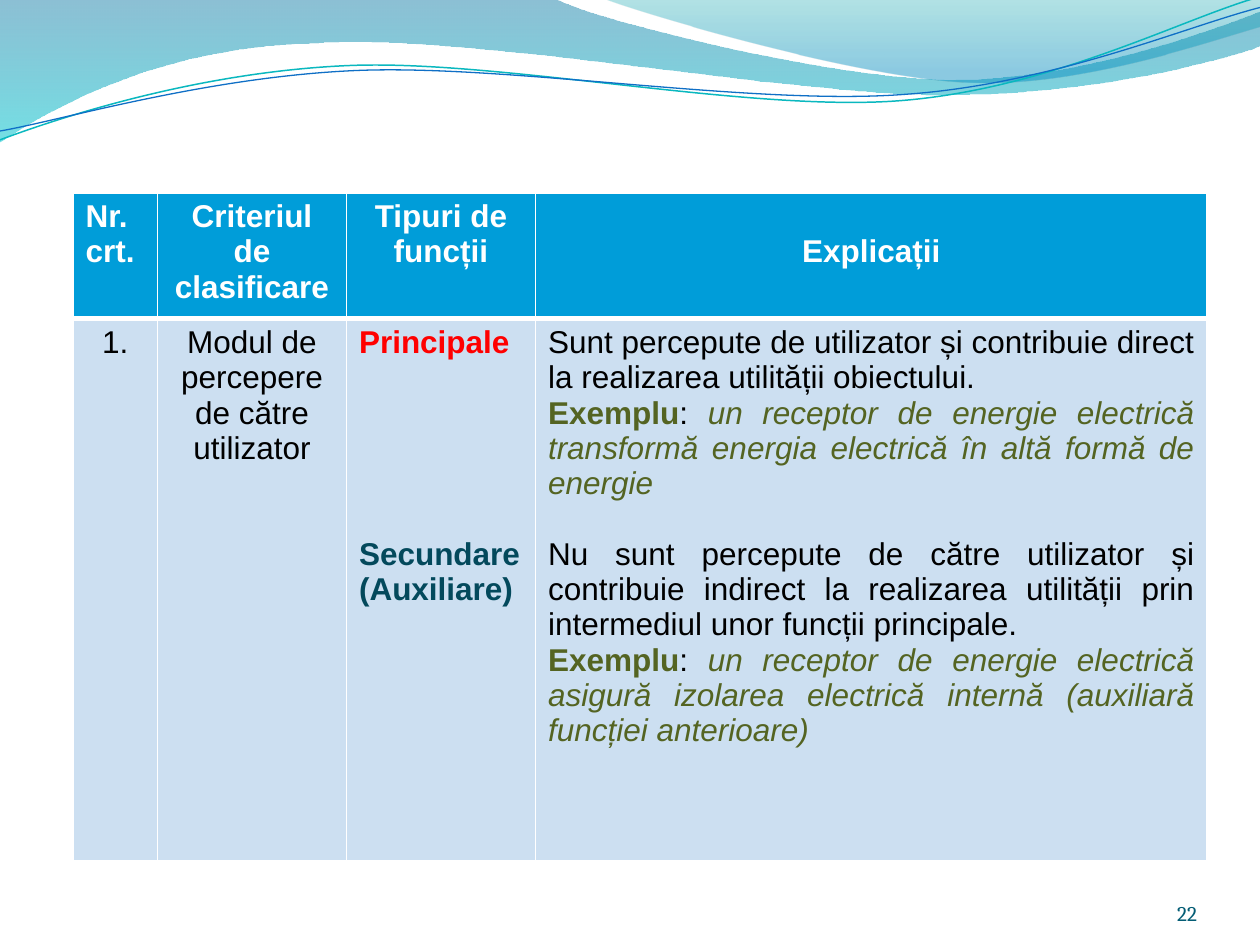
from math import cos, radians, sin

from lxml.etree import SubElement
from pptx import Presentation
from pptx.dml.color import RGBColor
from pptx.enum.text import MSO_ANCHOR, PP_ALIGN
from pptx.oxml.ns import qn
from pptx.util import Inches, Pt

COLORS = {
    "white": "FFFFFF", "black": "000000", "red": "FF0000", "teal": "03495C",
    "olive": "546422", "header": "009DD9", "body": "CCDFF1", "number": "045D75",
    "wave_blue": "0074A1", "wave_cyan": "00C6CF", "crest_teal": "00A1A9",
    "crest_blue": "008BBF", "line_teal": "0AB8BF", "line_blue": "0F6FC6",
}
LINE_HEIGHT = 20.2
TILT = -2.7

# Outlines in inches: one point is a straight step, three points are a Bezier curve.
WAVE = [[(0, 0)], [(4.4, -0.01)],
        [(4.76, 0.17), (6.64, 0.63), (7.58, 0.63)],
        [(8.53, 0.63), (9.58, 0.26), (10, 0.09)], [(10.01, 0.36)],
        [(9.83, 0.44), (8.7, 0.76), (7.46, 0.75)],
        [(6.22, 0.75), (3.82, 0.28), (2.57, 0.34)],
        [(1.29, 0.36), (0.46, 0.83), (-0.01, 1.13)], [(0, 0)]]
CREST = [[(4.79, -0.01)],
         [(5.09, 0.11), (6.82, 0.62), (7.69, 0.65)],
         [(8.56, 0.69), (9.61, 0.32), (10, 0.21)], [(10, 0)], [(4.79, -0.01)]]
TEAL_LINE = [[(0, 1.11)],
             [(0.48, 0.93), (1.58, 0.57), (2.77, 0.52)],
             [(3.95, 0.47), (5.93, 0.89), (7.13, 0.8)],
             [(8.33, 0.71), (9.38, 0.15), (9.98, -0.02)]]
BLUE_LINE = [[(0, 1.04)],
             [(0.47, 0.96), (1.64, 0.61), (2.83, 0.56)],
             [(4.03, 0.51), (5.97, 0.84), (7.17, 0.75)],
             [(8.36, 0.67), (9.41, 0.21), (10, 0.06)]]


def color(name):
    return RGBColor.from_string(COLORS[name])


def turn(outline, center, degrees):
    """Turn an outline clockwise about a center."""
    (cx, cy), c, s = center, cos(radians(degrees)), sin(radians(degrees))
    return [[(cx + (x - cx) * c - (y - cy) * s, cy + (x - cx) * s + (y - cy) * c)
             for x, y in step] for step in outline]


def add_outline(page, outline, close):
    """Add a freeform, joining each three-point step into one Bezier curve."""
    points = [(Inches(x), Inches(y)) for step in outline for x, y in step]
    builder = page.shapes.build_freeform(*points[0], scale=1.0)
    builder.add_line_segments(points[1:], close=close)
    shape = builder.convert_to_shape()
    shape.shadow.inherit = False
    segments = iter(shape._element.spPr.findall(".//" + qn("a:lnTo")))
    for step in outline[1:]:
        first, *others = [next(segments) for _ in step]
        if others:
            first.tag = qn("a:cubicBezTo")
        for segment in others:
            first.append(segment[0])
            segment.getparent().remove(segment)
    return shape


def add_band(page, outline, stops):
    """Add a borderless shape with a downward, see-through gradient."""
    shape = add_outline(page, outline, True)
    shape.line.fill.background()
    shape.fill.gradient()
    shape.fill.gradient_angle = 270
    for stop, (position, name, _) in zip(shape.fill.gradient_stops, stops):
        stop.position = position
        stop.color.rgb = color(name)
    tints = shape._element.spPr.findall(".//" + qn("a:srgbClr"))
    for tint, (_, _, opacity) in zip(tints, stops):
        SubElement(tint, qn("a:alpha"), val=str(opacity * 1000))


def add_curve(page, outline, center, name, width):
    """Add an open line, drawn level and then tilted about its center."""
    shape = add_outline(page, turn(outline, center, -TILT), False)
    shape.rotation = TILT
    shape.fill.background()
    shape.line.color.rgb = color(name)
    shape.line.width = Pt(width)


def add_span(para, text, name, bold=False, italic=False, size=18, font="Arial"):
    span = para.add_run()
    span.text = text
    span.font.name, span.font.size = font, Pt(size)
    span.font.bold, span.font.italic = bold, italic
    span.font.color.rgb = color(name)


def fill_cell(cell, fill, bottom, paras, align):
    """Style a cell and write paras, each a pair of blank lines above and spans."""
    properties = cell._tc.get_or_add_tcPr()
    for side, width in (("L", 1), ("R", 1), ("T", 1), ("B", bottom)):
        border = SubElement(properties, qn("a:ln" + side), w=str(Pt(width)))
        solid = SubElement(border, qn("a:solidFill"))
        SubElement(solid, qn("a:srgbClr"), val=COLORS["white"])
    cell.fill.solid()
    cell.fill.fore_color.rgb = color(fill)
    frame = cell.text_frame
    for index, (blank_lines, spans) in enumerate(paras):
        para = frame.add_paragraph() if index else frame.paragraphs[0]
        para.alignment = align
        if blank_lines:
            para.space_before = Pt(blank_lines * LINE_HEIGHT)
        for span in spans:
            add_span(para, *span)


def example(text):
    return (0, [("Exemplu", "olive", True), (": ", "black"), (text, "olive", False, True)])


def add_functions_table(page):
    table = page.shapes.add_table(2, 4, Inches(0.58), Inches(1.53), Inches(9), Inches(5.3)).table
    table.horz_banding = False
    for column, width in zip(table.columns, (0.67, 1.5, 1.5, 5.33)):
        column.width = Inches(width)
    for row, height in zip(table.rows, (1, 4.3)):
        row.height = Inches(height)

    left, center, justify = PP_ALIGN.LEFT, PP_ALIGN.CENTER, PP_ALIGN.JUSTIFY
    headers = [("Nr.crt.", left), ("Criteriul de clasificare", center),
               ("Tipuri de funcții", center), ("Explicații", center)]
    for column, (text, align) in enumerate(headers):
        fill_cell(table.cell(0, column), "header", 3, [(0, [(text, "white", True)])], align)
    table.cell(0, 3).margin_top = Inches(0.05) + Pt(LINE_HEIGHT)

    body = [
        (center, [(0, [("1.", "black")])]),
        (center, [(0, [("Modul de percepere de către utilizator", "black")])]),
        (left, [(0, [("Principale", "red", True)]),
                (5, [("Secundare", "teal", True)]),
                (0, [("(Auxiliare)", "teal", True)])]),
        (justify, [
            (0, [("Sunt percepute de utilizator și contribuie direct la realizarea "
                  "utilității obiectului.", "black")]),
            example("un receptor de energie electrică transformă energia electrică "
                    "în altă formă de energie"),
            (1, [("Nu sunt percepute de către utilizator și contribuie indirect la "
                  "realizarea utilității prin intermediul unor funcții principale.", "black")]),
            example("un receptor de energie electrică asigură izolarea electrică "
                    "internă (auxiliară funcției anterioare)")]),
    ]
    for column, (align, paras) in enumerate(body):
        fill_cell(table.cell(1, column), "body", 1, paras, align)


def add_page_number(page, number):
    box = page.shapes.add_textbox(Inches(8.67), Inches(6.95), Inches(0.83), Inches(0.4))
    frame = box.text_frame
    frame.word_wrap = True
    frame.vertical_anchor = MSO_ANCHOR.BOTTOM
    frame.margin_left = frame.margin_right = frame.margin_top = frame.margin_bottom = 0
    para = frame.paragraphs[0]
    para.alignment = PP_ALIGN.RIGHT
    add_span(para, number, "number", size=12, font="Cambria")


def main():
    deck = Presentation()
    deck.slide_width, deck.slide_height = Inches(10), Inches(7.5)
    page = deck.slides.add_slide(deck.slide_layouts[6])
    add_band(page, WAVE, [(0, "wave_blue", 45), (1, "wave_cyan", 55)])
    add_band(page, CREST, [(0, "crest_teal", 30), (0.8, "crest_blue", 45)])
    add_curve(page, TEAL_LINE, (4.99, 0.58), "line_teal", 0.85)
    add_curve(page, BLUE_LINE, (5, 0.59), "line_blue", 0.75)
    add_functions_table(page)
    add_page_number(page, "22")
    deck.save("out.pptx")


if __name__ == "__main__":
    main()
